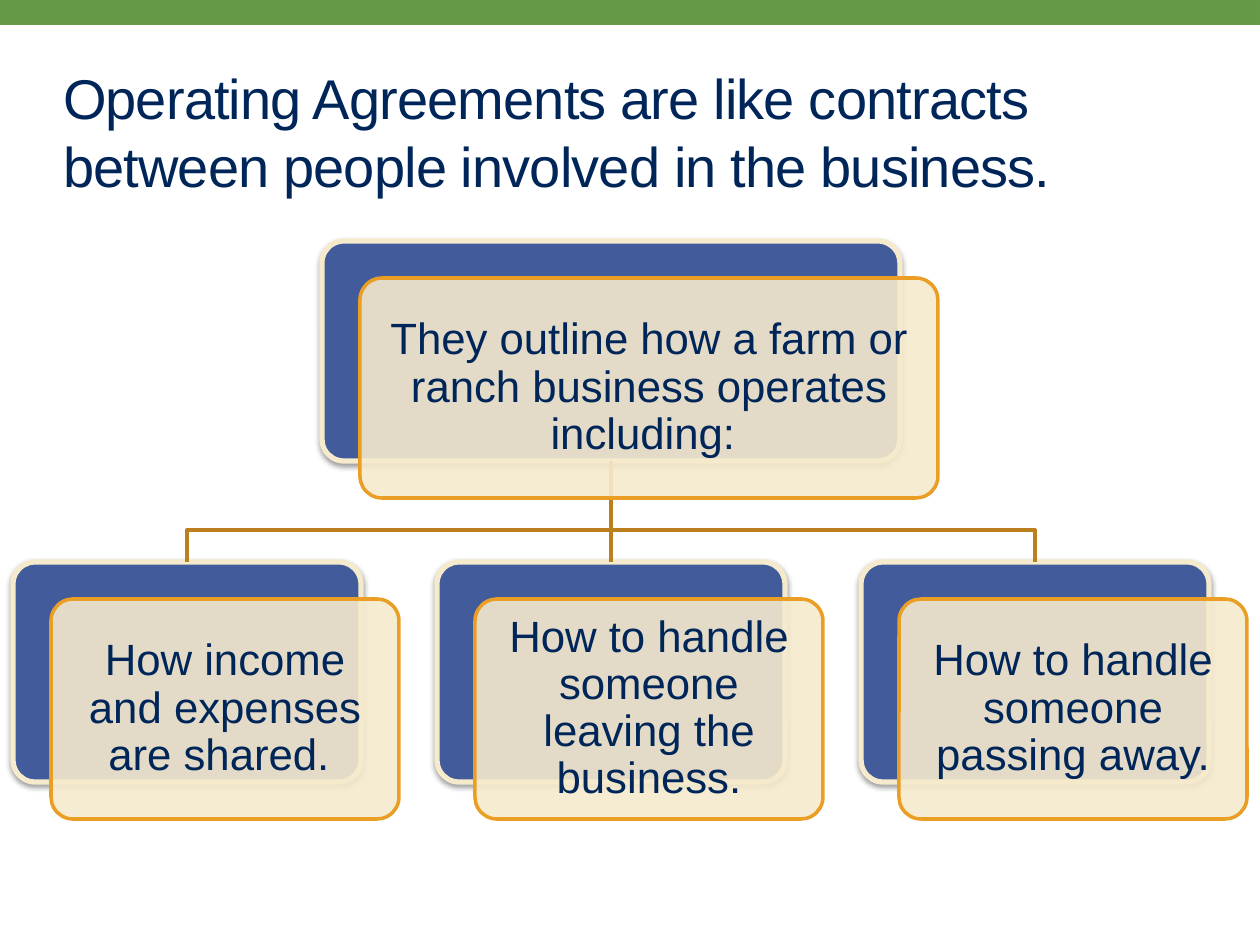
from lxml.etree import SubElement
from pptx import Presentation
from pptx.dml.color import RGBColor
from pptx.enum.shapes import MSO_CONNECTOR, MSO_SHAPE
from pptx.enum.text import MSO_ANCHOR, PP_ALIGN
from pptx.oxml.ns import qn
from pptx.util import Pt

PX = 914400 / 126
HEX = {"green": "669947", "edge": "679A47", "navy": "002659", "blue": "415B9B",
       "cream": "F5EACC", "gold": "EA9F24", "line": "BB7F1D", "black": "000000"}
RGB = {name: RGBColor.from_string(code) for name, code in HEX.items()}


def add_box(kind, rect, fill, edge, width):
    box = slide.shapes.add_shape(kind, *[round(v * PX) for v in rect])
    box.shadow.inherit = False
    box.fill.solid()
    box.fill.fore_color.rgb = RGB[fill]
    box.line.color.rgb = RGB[edge]
    box.line.width = Pt(width)
    if kind == MSO_SHAPE.ROUNDED_RECTANGLE:
        box.adjustments[0] = 0.1
    return box


def add_text(frame, text, size, inset):
    frame.word_wrap = True
    frame.vertical_anchor = MSO_ANCHOR.MIDDLE
    frame.margin_left = frame.margin_right = round(inset * PX)
    frame.margin_top = frame.margin_bottom = round(inset * PX)
    para = frame.paragraphs[0]
    run = para.add_run()
    run.text = text
    run.font.name = "Arial"
    run.font.size = Pt(size)
    run.font.color.rgb = RGB["navy"]
    return para, run


deck = Presentation()
deck.slide_width = round(1260 * PX)
deck.slide_height = round(945 * PX)
slide = deck.slides.add_slide(deck.slide_layouts[6])

# Top band
add_box(MSO_SHAPE.RECTANGLE, (0, -2, 1261, 25), "green", "edge", 2)

# Title
title = slide.shapes.add_textbox(*[round(v * PX) for v in (63, 66, 999, 130)])
para, run = add_text(
    title.text_frame,
    "Operating Agreements are like contracts between people involved in the business.",
    32, 0)
run._r.get_or_add_rPr().set("spc", "-50")

# Cards: root first, then its three children in a row
HIGH = 220
cards = [(322, 241, 578, "They outline how a farm or ranch business operates including: ")]
kids = ["How income and expenses are shared. ",
        "How to handle someone leaving the business.",
        "How to handle someone passing away."]
for i, text in enumerate(kids):
    cards.append((13 + 424 * i, 562, 348, text))

# Blue back plates with a soft shadow
plates = []
for left, top, wide, text in cards:
    plate = add_box(MSO_SHAPE.ROUNDED_RECTANGLE, (left, top, wide, HIGH), "blue", "cream", 3)
    effects = plate._element.spPr.find(qn("a:effectLst"))
    shade = SubElement(effects, qn("a:outerShdw"), blurRad=str(Pt(3.1)),
                       dist=str(Pt(1.6)), dir="5400000", rotWithShape="0")
    color = SubElement(shade, qn("a:srgbClr"), val=HEX["black"])
    SubElement(color, qn("a:alpha"), val="38000")
    plates.append(plate)

# Branches: bent lines to the outer cards, a straight one to the middle
root_x, root_y, bend_y, kid_y = 611, 461, 530, 562
for side in (-1, 1):
    kid_x = root_x + side * 424
    path = slide.shapes.build_freeform(root_x, root_y, scale=PX)
    path.add_line_segments([(root_x, bend_y), (kid_x, bend_y), (kid_x, kid_y)], close=False)
    branch = path.convert_to_shape()
    branch.shadow.inherit = False
    branch.fill.background()
    branch.line.color.rgb = RGB["line"]
    branch.line.width = Pt(2)

stem = slide.shapes.add_connector(MSO_CONNECTOR.STRAIGHT, 0, 0, 0, 0)
stem.begin_connect(plates[0], 2)
stem.end_connect(plates[2], 0)
stem.line.color.rgb = RGB["line"]
stem.line.width = Pt(2)
SubElement(stem._element.spPr, qn("a:effectLst"))

# Cream front cards with the text
for left, top, wide, text in cards:
    card = add_box(MSO_SHAPE.ROUNDED_RECTANGLE, (left + 38, top + 37, wide, HIGH),
                   "cream", "gold", 2)
    color = card._element.spPr.find(qn("a:solidFill")).find(qn("a:srgbClr"))
    SubElement(color, qn("a:alpha"), val="90000")
    para, run = add_text(card.text_frame, text, 25, 16)
    para.alignment = PP_ALIGN.CENTER
    para.line_spacing = 0.9

deck.save("out.pptx")
